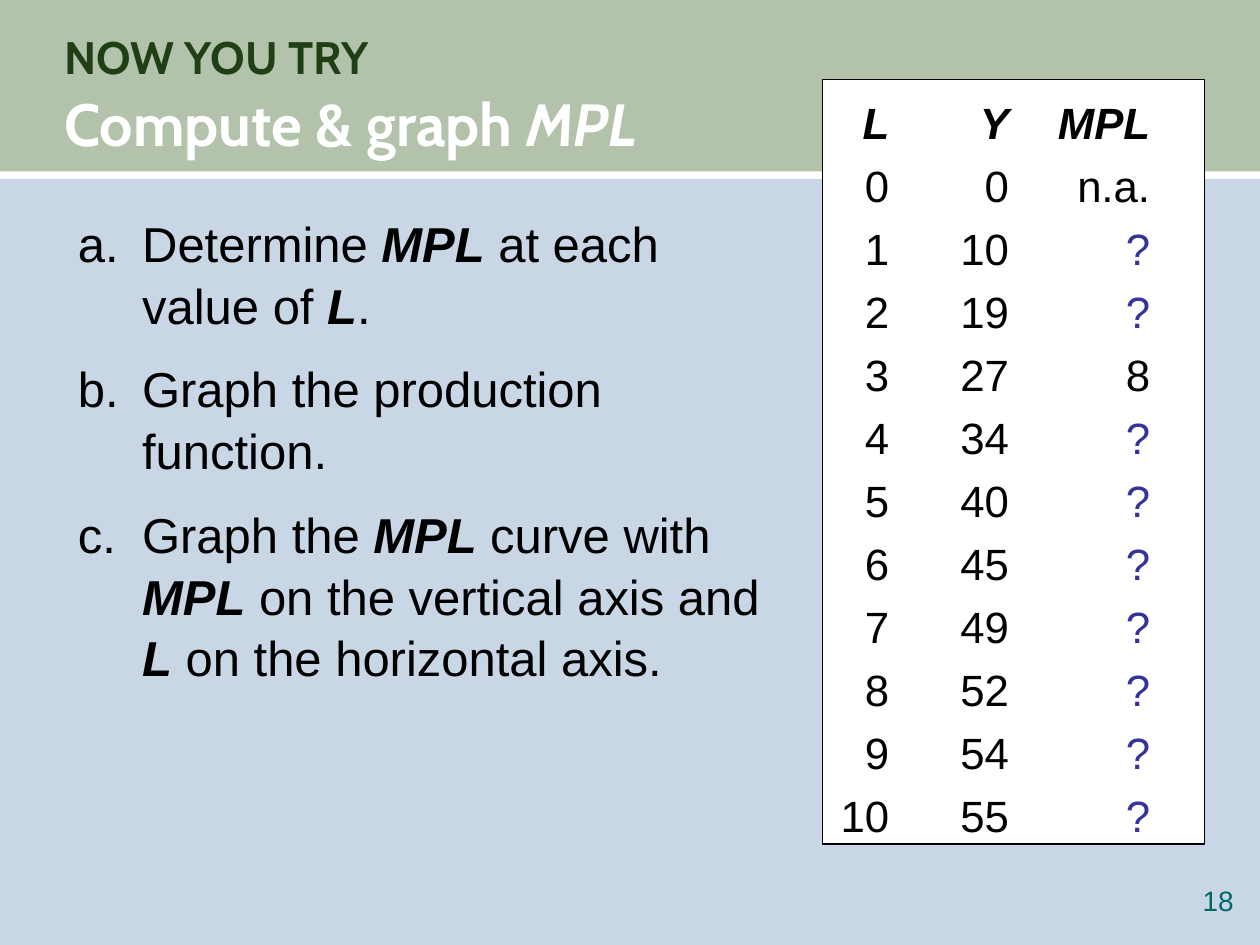
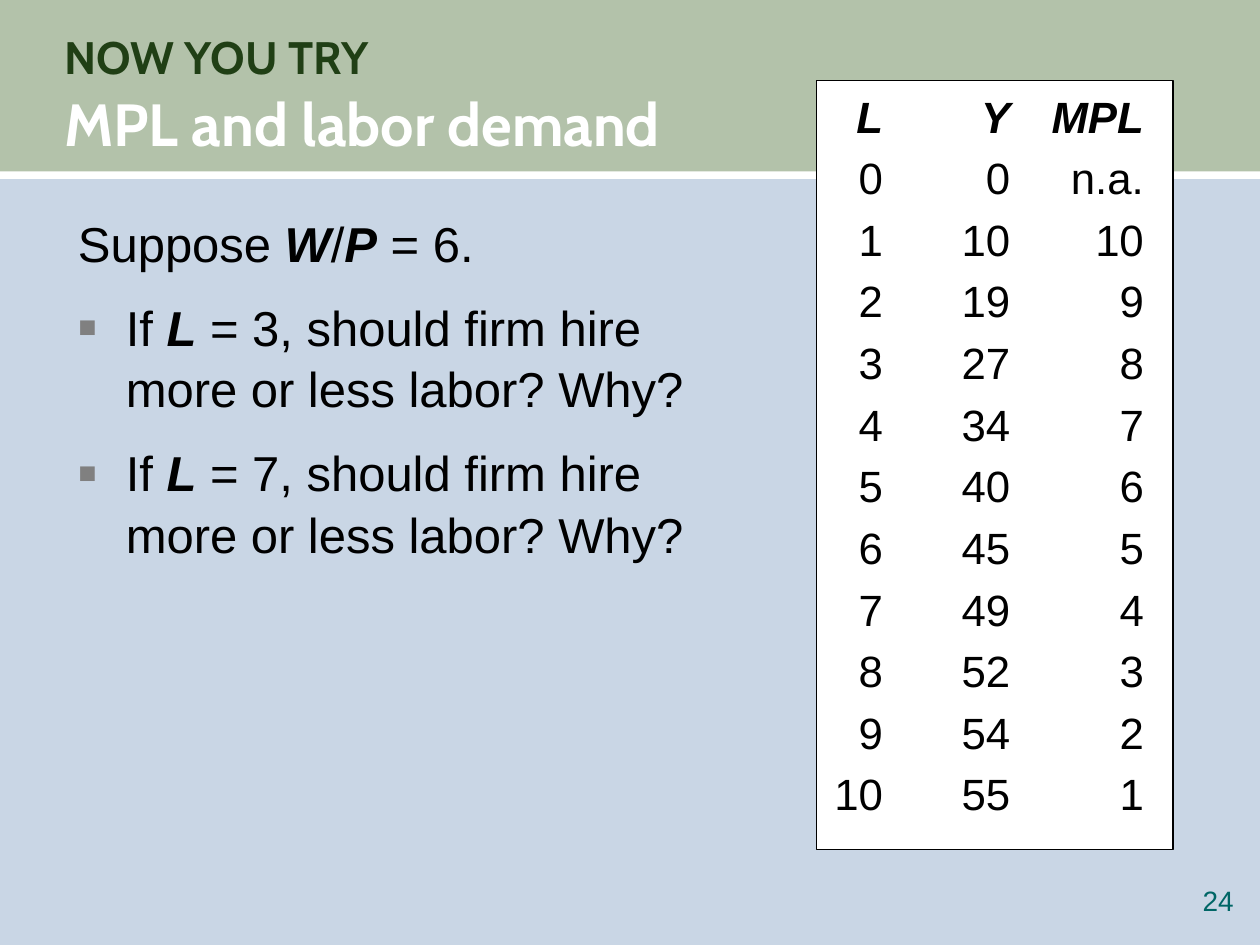
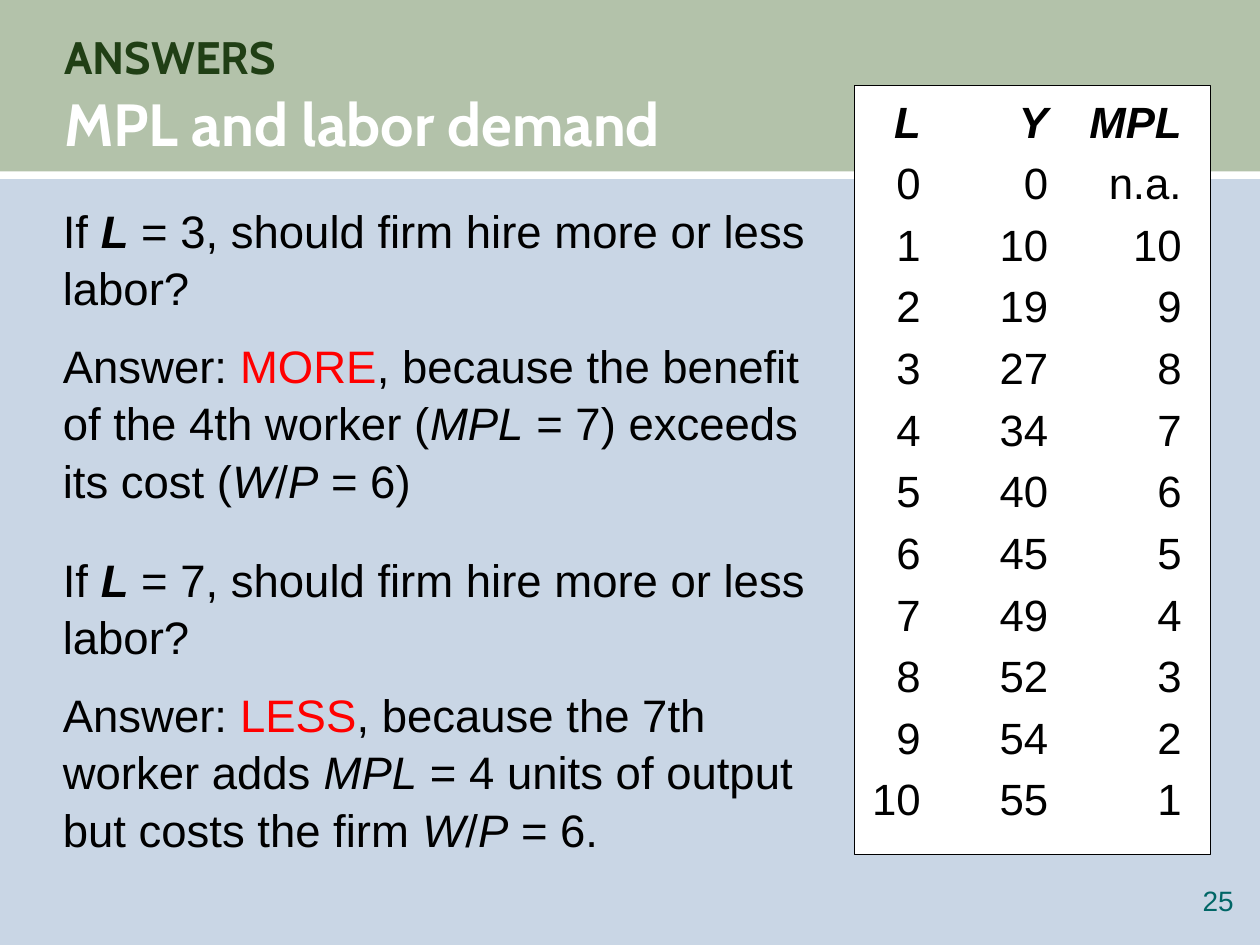
from dataclasses import dataclass

from lxml.etree import SubElement
from pptx import Presentation
from pptx.dml.color import RGBColor
from pptx.enum.shapes import MSO_SHAPE as Kind
from pptx.enum.text import MSO_ANCHOR as Anchor, MSO_AUTO_SIZE as Fit, PP_ALIGN as Align
from pptx.oxml.ns import qn
from pptx.util import Inches, Pt


@dataclass(frozen=True)
class Theme:
    back: str = "C9D6E5"
    band: str = "B3C2AA"
    white: str = "FFFFFF"
    black: str = "000000"
    dark: str = "203F15"
    teal: str = "006666"
    blue: str = "333399"
    red: str = "FF0000"
    gray: str = "808080"
    head: str = "Cabin"
    font: str = "Arial"
    label: int = 26
    title: int = 34
    cell: int = 25
    page: int = 16
    lead: float = 1.05


theme = Theme()
rgb = RGBColor.from_string
deck = Presentation()
deck.slide_width, deck.slide_height = Inches(10), Inches(7.5)
col, row = deck.slide_width / 100, deck.slide_height / 75


def spot(x, y, wide, high):
    """Turn columns and rows of the slide grid into lengths."""
    return int(x * col), int(y * row), int(wide * col), int(high * row)


def write(par, text, size, color=theme.black, name=theme.font):
    """Fill a paragraph; parts are split by | and styled by their first mark:
    * bold italic, _ italic, ! red, # blue, ^ title line."""
    font = par.font
    font.size, font.name, font.color.rgb = Pt(size), name, rgb(color)
    for part in text.split("|"):
        if part == "\n":
            par.add_line_break()
            continue
        run = par.add_run()
        while part[0] in "*_!#^":
            mark, part = part[0], part[1:]
            if mark in "*_":
                run.font.italic = True
            if mark == "*":
                run.font.bold = True
            if mark in "!#^":
                tint = {"!": theme.red, "#": theme.blue, "^": theme.white}[mark]
                run.font.color.rgb = rgb(tint)
            if mark == "^":
                run.font.size = Pt(theme.title)
        run.text = part


# Table values: the marginal product is the step in output
output = [0, 10, 19, 27, 34, 40, 45, 49, 52, 54, 55]
gains = ["n.a."] + [b - a for a, b in zip(output, output[1:])]
quiz = [gain if n in (0, 3) else "|#?" for n, gain in enumerate(gains)]

# Slide content; each body line is (text, hanging indent, bullet, space before)
gap = 0.45
pages = [
    dict(
        title="NOW YOU TRY|\n|^Compute & graph |^_MPL", page="18",
        body=(5.2, 16.2, 89.8, 50.8), size=28,
        lines=[
            ("a.\tDetermine |*MPL| at each |\n|value of |*L|.", 0.51, "", gap),
            ("b.\tGraph the production |\n|function.", 0.51, "", gap),
            ("c.\tGraph the |*MPL| curve with |\n|*MPL| on the vertical axis and "
             "|\n|*L| on the horizontal axis.", 0.51, "", gap),
        ],
        panel=(65.3, 6.3, 30.3, 60.7), gains=quiz,
        lead=1.2, above=0, stops=(0.43, 1.38, 2.5),
    ),
    dict(
        title="NOW YOU TRY|\n|^MPL and labor demand", page="24",
        body=(5.2, 16.2, 56.2, 50.8), size=28,
        lines=[("Suppose |*W|/|*P| = 6.", 0, "", gap)] + [
            (f"If |*L| = {n}, should firm hire more or less labor? Why?", 0.38, "▪", gap)
            for n in (3, 7)
        ],
        panel=(64.8, 6.4, 28.3, 61), gains=gains,
        lead=theme.lead, above=0.15, stops=(0.43, 1.44, 2.5),
    ),
    dict(
        title="ANSWERS|\n|^MPL and labor demand", page="25",
        body=(4, 15.4, 61.1, 57.6), size=26,
        lines=[
            ("If |*L| = 3, should firm hire more or less labor?", 0, "", gap),
            ("Answer: |!MORE|, because the benefit of the 4th worker (|_MPL| = 7) "
             "exceeds its cost (|_W|/|_P| = 6)", 0, "", gap),
            ("If |*L| = 7, should firm hire more or less labor?", 0, "", 24 / 26),
            ("Answer: |!LESS|, because the 7th worker adds |_MPL| = 4 units of output "
             "but costs the firm |_W|/|_P| = 6.", 0, "", gap),
        ],
        panel=(67.8, 6.8, 28.3, 61), gains=gains,
        lead=theme.lead, above=0.15, stops=(0.43, 1.44, 2.5),
    ),
]

# Shared background
fill = deck.slide_master.background.fill
fill.solid()
fill.fore_color.rgb = rgb(theme.back)

for page in pages:
    slide = deck.slides.add_slide(deck.slide_layouts[5])
    shapes = slide.shapes

    # Band, white strip and panel
    title = shapes.title
    boxes = []
    for place, color in (((0, -0.1, 100, 14.1), theme.band),
                         ((0, 13.6, 100, 0.6), theme.white),
                         (page["panel"], theme.white)):
        box = shapes.add_shape(Kind.RECTANGLE, *spot(*place))
        box.shadow.inherit = False
        box.fill.solid()
        box.fill.fore_color.rgb = rgb(color)
        box.line.fill.background()
        boxes.append(box)
    band, strip, panel = boxes
    title.element.addprevious(band.element)
    panel.line.color.rgb = rgb(theme.black)
    panel.line.width = Pt(0.75)

    # Title
    title.left, title.top, title.width, title.height = spot(5.1, 2.2, 90.2, 10.3)
    frame = title.text_frame
    frame.auto_size, frame.word_wrap = Fit.NONE, True
    frame.vertical_anchor = Anchor.MIDDLE
    frame.margin_left = frame.margin_right = frame.margin_top = frame.margin_bottom = 0
    par = frame.paragraphs[0]
    par.alignment, par.line_spacing = Align.LEFT, theme.lead
    par.font.bold = True
    write(par, page["title"], theme.label, theme.dark, theme.head)

    # Page number
    frame = shapes.add_textbox(*spot(92.4, 70.1, 5.5, 3.2)).text_frame
    frame.word_wrap = True
    frame.margin_left = frame.margin_right = frame.margin_top = frame.margin_bottom = 0
    par = frame.paragraphs[0]
    par.alignment = Align.RIGHT
    write(par, page["page"], theme.page, theme.teal)

    # Body
    frame = shapes.add_textbox(*spot(*page["body"])).text_frame
    frame.word_wrap = True
    for n, (text, hang, bullet, above) in enumerate(page["lines"]):
        par = frame.add_paragraph() if n else frame.paragraphs[0]
        props = par._p.get_or_add_pPr()
        if hang:
            props.set("marL", str(Inches(hang)))
            props.set("indent", str(-Inches(hang)))
        if bullet:
            tint = SubElement(props, qn("a:buClr"))
            SubElement(tint, qn("a:srgbClr"), val=theme.gray)
            SubElement(props, qn("a:buSzPct"), val="120000")
            SubElement(props, qn("a:buFont"), typeface=theme.font)
            SubElement(props, qn("a:buChar"), char=bullet)
        par.line_spacing = theme.lead
        par.space_before = Pt(above * page["size"])
        write(par, text, page["size"])

    # Panel of labor, output and marginal product
    frame = panel.text_frame
    frame.vertical_anchor = Anchor.TOP
    rows = ["*\tL\tY\tMPL"]
    rows += [f"\t{n}\t{y}\t{gain}" for n, (y, gain) in enumerate(zip(output, page["gains"]))]
    for n, text in enumerate(rows):
        par = frame.add_paragraph() if n else frame.paragraphs[0]
        tabs = SubElement(par._p.get_or_add_pPr(), qn("a:tabLst"))
        for stop in page["stops"]:
            SubElement(tabs, qn("a:tab"), pos=str(Inches(stop)), algn="r")
        par.alignment, par.line_spacing = Align.LEFT, page["lead"]
        par.space_before = Pt(page["above"] * theme.cell)
        write(par, text, theme.cell)

    # Panel lies in front of the body
    shapes[-1].element.addnext(panel.element)

deck.save("out.pptx")
